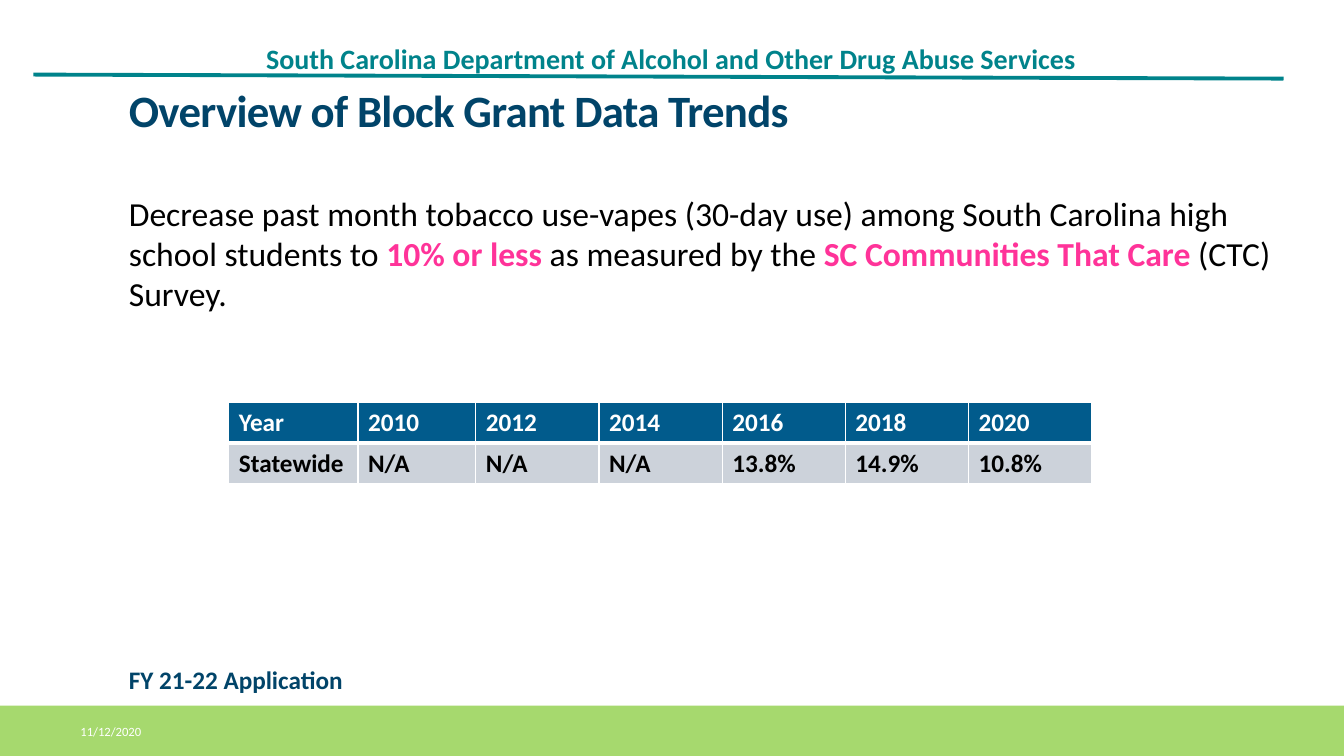
import pptx
import pptx.dml.color
import pptx.enum.shapes
import pptx.enum.text
import pptx.oxml
import pptx.oxml.ns
import pptx.util

Inches, Pt = pptx.util.Inches, pptx.util.Pt
ANCHOR = pptx.enum.text.MSO_ANCHOR

COLORS = {
    "teal": "00838B", "green": "A6D96E", "navy": "014469", "blue": "015B8C",
    "grey": "CCD2DA", "pink": "FF3399", "white": "FFFFFF", "black": "000000",
}
WIDTH, HEIGHT = 13.33, 7.5
MARGIN = 1.18
TREND = [
    ["Year", "2010", "2012", "2014", "2016", "2018", "2020"],
    ["Statewide", "N/A", "N/A", "N/A", "13.8%", "14.9%", "10.8%"],
]
GOAL = [
    ("Decrease past month tobacco use-vapes (30-day use) among "
     "South Carolina high school students to ", "black", False),
    ("10% or less ", "pink", True),
    ("as measured by the ", "black", False),
    ("SC Communities That Care ", "pink", True),
    ("(CTC) Survey.", "black", False),
]


def rgb(name):
    return pptx.dml.color.RGBColor.from_string(COLORS[name])


def add_span(para, text, size, color, bold=False):
    span = para.add_run()
    span.text = text
    span.font.name = "Calibri"
    span.font.size = Pt(size)
    span.font.bold = bold
    span.font.color.rgb = rgb(color)
    return span


def add_text(page, box, spans, size, anchor=ANCHOR.TOP, wrap=True, spacing=None):
    """Place one paragraph of (text, color, bold) spans in box, in inches."""
    shape = page.shapes.add_textbox(*map(Inches, box))
    frame = shape.text_frame
    frame.word_wrap = wrap
    frame.vertical_anchor = anchor
    para = frame.paragraphs[0]
    if spacing:
        para.line_spacing = spacing
    for text, color, bold in spans:
        add_span(para, text, size, color, bold)
    return frame


def add_header(page, box):
    left, top, width, height = box
    name = "South Carolina Department of Alcohol and Other Drug Abuse Services"
    frame = add_text(page, (left + 0.18 * width, top, 0.82 * width, height),
                     [(name, "teal", True)], 20, ANCHOR.MIDDLE, spacing=0.9)
    frame.margin_left = frame.margin_right = Inches(0.07)
    frame.margin_top = frame.margin_bottom = Inches(0.04)
    rule = page.shapes.add_connector(
        pptx.enum.shapes.MSO_CONNECTOR.STRAIGHT, Inches(left), Inches(top + 0.46),
        Inches(left + width - 0.04), Inches(top + 0.5))
    rule.line.color.rgb = rgb("teal")
    rule.line.width = Pt(2.75)
    rule._element.spPr.append(pptx.oxml.parse_xml(
        f"<a:effectLst {pptx.oxml.ns.nsdecls('a')}/>"))


def add_footer(page, box):
    left, top, width, height = box
    band = page.shapes.add_shape(
        pptx.enum.shapes.MSO_SHAPE.RECTANGLE, *map(Inches, box))
    band.shadow.inherit = False
    band.fill.solid()
    band.fill.fore_color.rgb = rgb("green")
    band.line.fill.background()
    add_text(page, (left + 0.7, top + 0.06, 2.7, 0.4),
             [("11/12/2020", "white", False)], 9, ANCHOR.MIDDLE)


def set_borders(cell, **points):
    """Draw white cell edges; points maps lnL, lnR, lnT, lnB to widths."""
    properties = cell._tc.get_or_add_tcPr()
    for index, (edge, width) in enumerate(points.items()):
        properties.insert(index, pptx.oxml.parse_xml(
            f'<a:{edge} {pptx.oxml.ns.nsdecls("a")} w="{Pt(width)}"><a:solidFill>'
            f'<a:srgbClr val="{COLORS["white"]}"/></a:solidFill></a:{edge}>'))


def add_trend_table(page, box):
    frame = page.shapes.add_table(len(TREND), len(TREND[0]), *map(Inches, box))
    table = frame.table
    first, second = 1.28, 1.17
    rest = (box[2] - first - second) / (len(TREND[0]) - 2)
    for column, width in zip(table.columns, [first, second] + [rest] * 5):
        column.width = Inches(width)
    for row, values in enumerate(TREND):
        header = row == 0
        for column, value in enumerate(values):
            cell = table.cell(row, column)
            cell.fill.solid()
            cell.fill.fore_color.rgb = rgb("blue" if header else "grey")
            set_borders(cell, lnL=1, lnR=1, lnT=1 if header else 3,
                        lnB=3 if header else 1)
            add_span(cell.text_frame.paragraphs[0], value, 18,
                     "white" if header else "black", True)


def add_body(page, box):
    left, top, width, height = box
    title = add_text(page, (left, top, 11, 0.67),
                     [("Overview of Block Grant Data Trends", "navy", True)],
                     32, spacing=0.85)
    title.paragraphs[0].runs[0]._r.get_or_add_rPr().set("spc", "-50")
    add_trend_table(page, (left + 1.09, top + 3.14, 8.56, 0.81))
    add_text(page, (left, top + height - 0.4, 2.34, 0.4),
             [("FY 21-22 Application", "navy", True)], 18, wrap=False)
    add_text(page, (left, top + 1.01, width, 1.48), GOAL, 24)


def main():
    deck = pptx.Presentation()
    deck.slide_width, deck.slide_height = Inches(WIDTH), Inches(HEIGHT)
    page = deck.slides.add_slide(deck.slide_layouts[6])
    add_header(page, (0.33, 0.28, 12.44, 0.63))
    add_footer(page, (0, HEIGHT - 0.5, WIDTH, 0.5))
    add_body(page, (MARGIN, 0.85, 11.52, 6.09))
    deck.save("out.pptx")


if __name__ == "__main__":
    main()
